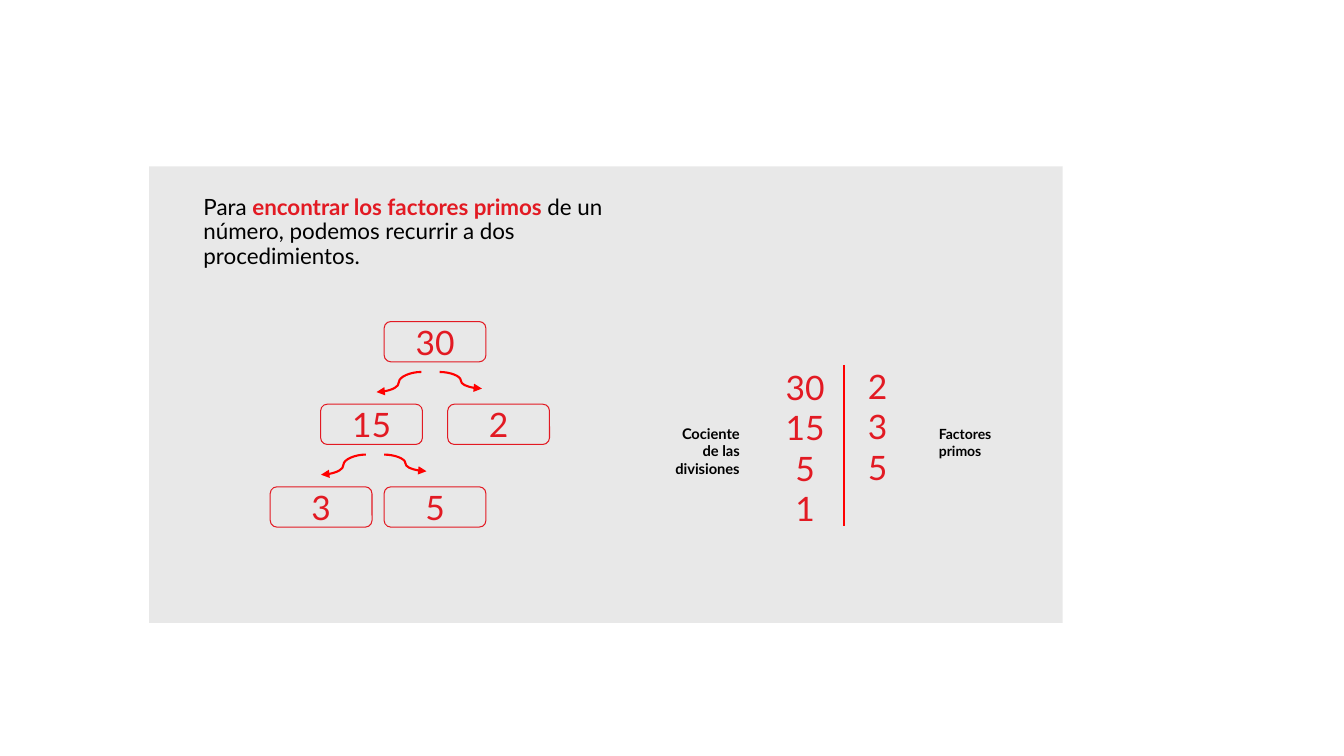
from dataclasses import dataclass

from lxml import etree
from pptx import Presentation
from pptx import util as u
from pptx.dml.color import RGBColor
from pptx.enum import shapes, text
from pptx.oxml import ns

CELL = u.Inches(0.1)  # square grid: 133.3 columns by 75 rows


@dataclass(frozen=True)
class Theme:
    font: str = "Lato"
    ink: RGBColor = RGBColor(0x00, 0x00, 0x00)
    accent: RGBColor = RGBColor(0xE2, 0x1A, 0x23)
    stroke: RGBColor = RGBColor(0xFF, 0x00, 0x00)
    panel: RGBColor = RGBColor(0xE5, 0xE5, 0xE5)
    panel_alpha: int = 85
    body: float = 16
    number: float = 24
    quotient_label: float = 10.5
    factor_label: float = 10
    outline: float = 0.75
    line: float = 1.5


THEME = Theme()


@dataclass(frozen=True)
class Box:
    """An area measured in grid columns and rows."""
    x: float
    y: float
    w: float
    h: float

    def inner(self, dx, dy, w, h):
        return Box(self.x + dx, self.y + dy, w, h)

    def emu(self):
        return [cells(v) for v in (self.x, self.y, self.w, self.h)]


def cells(count):
    return round(count * CELL)


def style(paragraph, size, color, bold=False, align=text.PP_ALIGN.LEFT):
    paragraph.alignment = align
    font = paragraph.font
    font.name, font.size, font.bold = THEME.font, u.Pt(size), bold
    font.color.rgb = color


def rounded(slide, box, words, size=THEME.number, color=THEME.accent, bold=False,
            align=text.PP_ALIGN.CENTER, outlined=False):
    tile = slide.shapes.add_shape(shapes.MSO_SHAPE.ROUNDED_RECTANGLE, *box.emu())
    tile.shadow.inherit = False
    tile.fill.background()
    if outlined:
        tile.line.color.rgb = THEME.accent
        tile.line.width = u.Pt(THEME.outline)
    else:
        tile.line.fill.background()
    tile.text_frame.vertical_anchor = text.MSO_ANCHOR.MIDDLE
    tile.text_frame.text = words
    style(tile.text_frame.paragraphs[0], size, color, bold, align)


def connect(slide, kind, x, y, dx, dy, arrow=False):
    link = slide.shapes.add_connector(
        kind, cells(x), cells(y), cells(x + dx), cells(y + dy))
    link.line.color.rgb = THEME.stroke
    link.line.width = u.Pt(THEME.line)
    if arrow:
        etree.SubElement(link.line._get_or_add_ln(), ns.qn("a:tailEnd"), type="triangle")
    etree.SubElement(link._element.spPr, ns.qn("a:effectLst"))


def draw_panel(slide, box):
    panel = slide.shapes.add_shape(shapes.MSO_SHAPE.RECTANGLE, *box.emu())
    panel.shadow.inherit = False
    panel.line.fill.background()
    panel.fill.solid()
    panel.fill.fore_color.rgb = THEME.panel
    tint = panel._element.spPr.find(".//" + ns.qn("a:srgbClr"))
    etree.SubElement(tint, ns.qn("a:alpha"), val=str(THEME.panel_alpha * 1000))


def draw_intro(slide, box):
    frame = slide.shapes.add_textbox(*box.emu()).text_frame
    frame.word_wrap = True
    sentence = frame.paragraphs[0]
    sentence.line_spacing = 0.9
    sentence.space_after = u.Pt(6)
    for words, key in (("Para ", False),
                       ("encontrar los factores primos ", True),
                       ("de un número, podemos recurrir a dos procedimientos.", False)):
        run = sentence.add_run()
        run.text = words
        run.font.bold = key
        run.font.color.rgb = THEME.accent if key else THEME.ink
    sentence.font.name, sentence.font.size = THEME.font, u.Pt(THEME.body)


def draw_factor_tree(slide, box):
    node_w, node_h, level_h = 10.1, 4, 8.2
    levels = (((11.3, "30"),),
              ((5, "15"), (17.6, "2")),
              ((0, "3"), (11.3, "5")))
    for level, nodes in enumerate(levels):
        for column, number in nodes:
            rounded(slide, box.inner(column, level * level_h, node_w, node_h),
                    number, outlined=True)

    # A pair of arrows under each number that is split
    for level, stem in enumerate((15, 9.5)):
        x, y = box.x + stem, box.y + level * level_h + 5
        for start, dx, dy in ((0, -4.45, 2), (1.8, 4.2, 1.65)):
            connect(slide, shapes.MSO_CONNECTOR.CURVE, x + start, y, dx, dy, arrow=True)


def draw_division_ladder(slide, box):
    # Numbers on both sides of the bar
    bar_x, number_w, row_h = 19.2, 6.7, 4
    connect(slide, shapes.MSO_CONNECTOR.STRAIGHT, box.x + bar_x, box.y, 0, box.h)
    for column, top, numbers in ((12, 0.2, ("30", "15", "5", "1")),
                                 (bar_x, 0.1, ("2", "3", "5"))):
        for row, number in enumerate(numbers):
            rounded(slide, box.inner(column, top + row * row_h, number_w, row_h), number)

    # Column labels
    rounded(slide, box.inner(0, 4.1, 10.3, 8.9), "Cociente de las divisiones",
            THEME.quotient_label, THEME.ink, True, text.PP_ALIGN.RIGHT)
    rounded(slide, box.inner(27.2, 3.2, 8.9, 8.9), "Factores primos",
            THEME.factor_label, THEME.ink, True, text.PP_ALIGN.LEFT)


def build_factor_slide(deck):
    slide = deck.slides.add_slide(deck.slide_layouts[6])
    panel = Box(14.8, 16.5, 90.6, 45.3)
    draw_panel(slide, panel)
    draw_intro(slide, panel.inner(4.4, 2.5, 43.6, 8.3))
    draw_factor_tree(slide, panel.inner(12, 15.4, 27.7, 20.4))
    draw_division_ladder(slide, panel.inner(49.7, 19.7, 36.1, 16))


def main():
    deck = Presentation()
    deck.slide_width, deck.slide_height = u.Inches(13.33), u.Inches(7.5)
    build_factor_slide(deck)
    deck.save("out.pptx")


if __name__ == "__main__":
    main()
